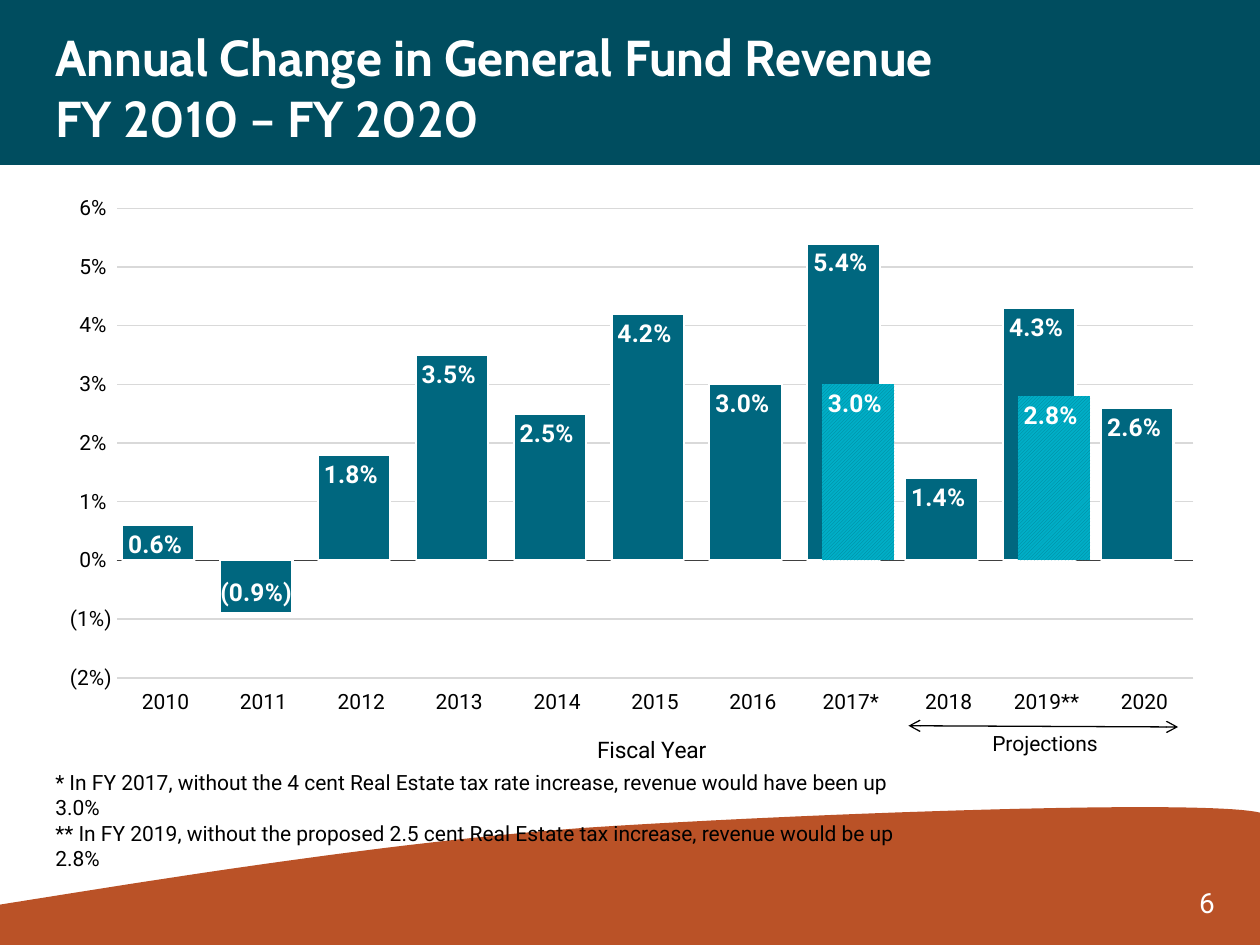
from lxml import etree
from pptx import Presentation
from pptx.chart.data import CategoryChartData
from pptx.dml.color import RGBColor
from pptx.enum.chart import XL_CHART_TYPE, XL_LABEL_POSITION, XL_TICK_LABEL_POSITION, XL_TICK_MARK
from pptx.enum.dml import MSO_PATTERN
from pptx.enum.shapes import MSO_CONNECTOR, MSO_SHAPE
from pptx.enum.text import MSO_ANCHOR, PP_ALIGN
from pptx.oxml import parse_xml
from pptx.oxml.ns import nsdecls, qn
from pptx.util import Inches, Pt

COLUMNS = XL_CHART_TYPE.COLUMN_CLUSTERED
INSIDE_END = XL_LABEL_POSITION.INSIDE_END
LOW = XL_TICK_LABEL_POSITION.LOW
NO_TICK = XL_TICK_MARK.NONE
DIAGONAL = MSO_PATTERN.DARK_UPWARD_DIAGONAL
STRAIGHT = MSO_CONNECTOR.STRAIGHT
RECTANGLE = MSO_SHAPE.RECTANGLE
TOP, MIDDLE = MSO_ANCHOR.TOP, MSO_ANCHOR.MIDDLE
LEFT, CENTER = PP_ALIGN.LEFT, PP_ALIGN.CENTER

WHITE = RGBColor(0xFF, 0xFF, 0xFF)
BLACK = RGBColor(0, 0, 0)
RUST = RGBColor(0xBA, 0x52, 0x27)
BANNER = RGBColor(0x00, 0x4D, 0x5F)
TEAL = RGBColor(0x00, 0x67, 0x7F)
HATCH = RGBColor(0x00, 0x83, 0x95)
AQUA = RGBColor(0x00, 0xAE, 0xC7)
AXIS = RGBColor(0x40, 0x40, 0x40)
GRID = RGBColor(0xD9, 0xD9, 0xD9)
HEADING_FONT, BODY_FONT = "Cabin", "Roboto"

TITLE = "Annual Change in General Fund Revenue \vFY 2010 – FY 2020"
NOTES = [
    "* In FY 2017, without the 4 cent Real Estate tax rate increase, revenue would have been up 3.0%",
    "** In FY 2019, without the proposed 2.5 cent Real Estate tax increase, revenue would be up 2.8%",
]
YEARS = ["2010", "2011", "2012", "2013", "2014", "2015", "2016", "2017*", "2018", "2019**", "2020"]
CHANGES = [0.006, -0.009, 0.018, 0.035, 0.025, 0.042, 0.03, 0.054, 0.014, 0.043, 0.026]
WITHOUT_INCREASE = {"2017*": 0.03, "2019**": 0.028}


def style_font(font, size, color, name=BODY_FONT, bold=False):
    font.name, font.size, font.bold = name, Pt(size), bold
    font.color.rgb = color


def add_text(page, box, lines, size, color, name=BODY_FONT, bold=False,
             align=LEFT, anchor=TOP, wrap=True, inset=None):
    frame = page.shapes.add_textbox(*map(Inches, box)).text_frame
    frame.word_wrap, frame.vertical_anchor = wrap, anchor
    if inset is not None:
        frame.margin_left = frame.margin_right = Inches(inset)
        frame.margin_top = frame.margin_bottom = Inches(inset)
    frame.text = "\n".join(lines)
    for para in frame.paragraphs:
        para.alignment = align
        for span in para.runs:
            style_font(span.font, size, color, name, bold)


def set_solid(shape, color):
    shape.shadow.inherit = False
    shape.fill.solid()
    shape.fill.fore_color.rgb = color
    shape.line.fill.background()


def curve_points(start, control_1, control_2, end, steps=40):
    """Points along a cubic curve, without its start."""
    for step in range(1, steps + 1):
        t = step / steps
        weights = ((1 - t) ** 3, 3 * t * (1 - t) ** 2, 3 * t ** 2 * (1 - t), t ** 3)
        yield tuple(
            Inches(sum(w * point[axis] for w, point in zip(weights, (start, control_1, control_2, end))))
            for axis in (0, 1)
        )


def add_wave(page, box):
    left, top, width, height = box
    right, bottom = left + width, top + height
    crest, middle, shore = (right, top + 0.04), (4.65, top + 0.16), (left, top + 0.77)
    builder = page.shapes.build_freeform(Inches(left), Inches(bottom))
    outline = [(Inches(right), Inches(bottom)), tuple(map(Inches, crest))]
    outline += curve_points(crest, (9.55, top - 0.07), (6.32, top + 0.05), middle)
    outline += curve_points(middle, (2.99, top + 0.28), (1.01, top + 0.61), shore)
    builder.add_line_segments(outline, close=True)
    set_solid(builder.convert_to_shape(), RUST)


def add_banner(page, box):
    set_solid(page.shapes.add_shape(RECTANGLE, *map(Inches, box)), BANNER)
    left, top, width, height = box
    add_text(page, (left + 0.34, top + 0.21, width - 0.71, height - 0.35), [TITLE],
             28.8, WHITE, HEADING_FONT, bold=True, anchor=MIDDLE)


def manual_layout(x, y, width=None, height=None):
    layout = etree.Element(qn("c:layout"))
    manual = etree.SubElement(layout, qn("c:manualLayout"))
    settings = [("xMode", "edge"), ("yMode", "edge"), ("x", x), ("y", y)]
    if width is not None:
        settings.insert(0, ("layoutTarget", "inner"))
        settings += [("w", width), ("h", height)]
    for tag, value in settings:
        etree.SubElement(manual, qn(f"c:{tag}")).set("val", str(value))
    return layout


def replace_layout(parent, layout, index):
    for old in parent.findall(qn("c:layout")):
        parent.remove(old)
    parent.insert(index, layout)


def style_axes(chart):
    years, percents = chart.category_axis, chart.value_axis
    for axis in (years, percents):
        axis.major_tick_mark = axis.minor_tick_mark = NO_TICK
        style_font(axis.tick_labels.font, 12, BLACK)
    years.tick_label_position = LOW
    years.format.line.color.rgb, years.format.line.width = AXIS, Pt(1)
    years.axis_title.text_frame.text = "Fiscal Year"
    style_font(years.axis_title.text_frame.paragraphs[0].runs[0].font, 13, BLACK)
    replace_layout(years.axis_title._element, manual_layout(0.47, 0.9), 1)

    percents.minimum_scale, percents.maximum_scale, percents.major_unit = -0.02, 0.06, 0.01
    percents.tick_labels.number_format = r"0%_);\(0%\)"
    percents.tick_labels.number_format_is_linked = False
    percents.format.line.fill.background()
    grid = percents.major_gridlines.format.line
    grid.color.rgb, grid.width = GRID, Pt(0.75)


def add_revenue_chart(page, box):
    data = CategoryChartData()
    data.categories = YEARS
    data.add_series("Series 1", CHANGES)
    data.add_series("Series 2", [WITHOUT_INCREASE.get(year) for year in YEARS])
    chart = page.shapes.add_chart(COLUMNS, *map(Inches, box), data).chart
    chart.has_legend = chart.has_title = False
    style_font(chart.font, 10, BLACK)
    replace_layout(chart._chartSpace.chart.plotArea, manual_layout(0.063, 0.032, 0.92, 0.78), 0)
    style_axes(chart)

    plot = chart.plots[0]
    plot.gap_width, plot.overlap, plot.vary_by_categories = 15, 80, False
    actual, without_increase = plot.series
    actual.format.fill.solid()
    actual.format.fill.fore_color.rgb = TEAL
    actual.format.line.color.rgb, actual.format.line.width = WHITE, Pt(1.25)
    hatch = without_increase.format.fill
    hatch.patterned()
    hatch.pattern = DIAGONAL
    hatch.fore_color.rgb, hatch.back_color.rgb = HATCH, AQUA
    for series in plot.series:
        series.invert_if_negative = False
        labels = series.data_labels
        labels.show_value, labels.position = True, INSIDE_END
        labels.number_format, labels.number_format_is_linked = r"0.0%_);\(0.0%\)", False
        style_font(labels.font, 14, WHITE, bold=True)


def add_projection_range(page, box):
    left, top, width, height = box
    arrow = page.shapes.add_connector(
        STRAIGHT, Inches(left), Inches(top + 0.01), Inches(left + width), Inches(top + 0.02))
    arrow.line.color.rgb, arrow.line.width = BLACK, Pt(0.75)
    for end in ("headEnd", "tailEnd"):
        arrow.line._get_or_add_ln().append(parse_xml(f'<a:{end} {nsdecls("a")} type="arrow"/>'))
    etree.SubElement(arrow._element.spPr, qn("a:effectLst"))
    add_text(page, (left + 0.27, top, 1.63, height), ["Projections"], 12, BLACK,
             align=CENTER, wrap=False)


def main():
    deck = Presentation()
    deck.slide_width, deck.slide_height = Inches(10), Inches(7.5)
    page = deck.slides.add_slide(deck.slide_layouts[6])

    # Background bands and title
    add_wave(page, (0, 6.41, 10, 1.09))
    add_banner(page, (0, 0, 10, 1.31))
    # Page number
    add_text(page, (9.33, 7, 0.5, 0.33), ["6"], 16, WHITE, align=CENTER, anchor=MIDDLE, inset=0.05)
    # Chart with its projection range
    add_revenue_chart(page, (0.34, 1.5, 9.29, 4.78))
    add_projection_range(page, (7.21, 5.75, 2.14, 0.36))
    # Footnotes
    add_text(page, (0.34, 6.06, 7.18, 0.58), NOTES, 12, BLACK)

    deck.save("out.pptx")


if __name__ == "__main__":
    main()
